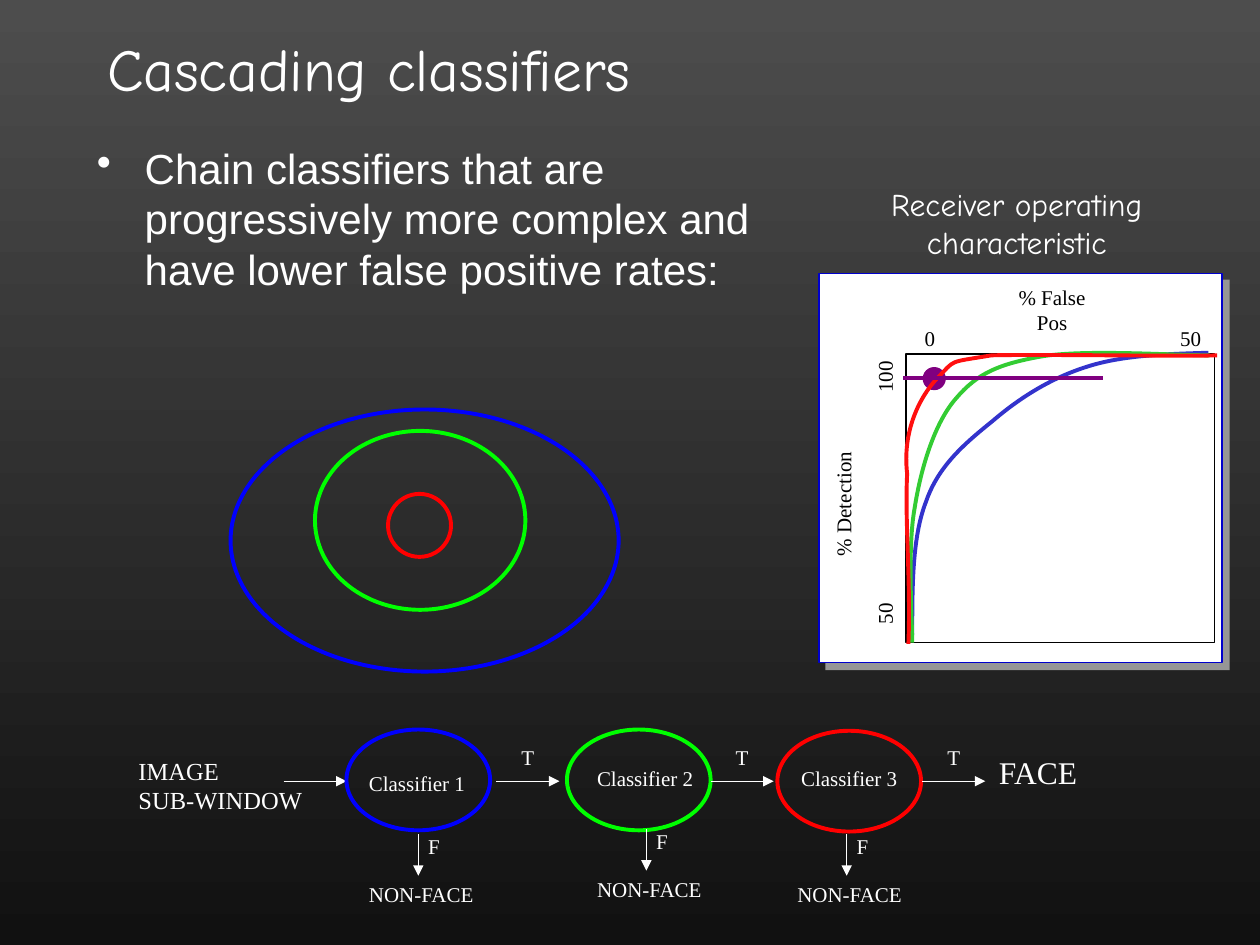
from dataclasses import dataclass

from pptx import Presentation
from pptx.dml.color import RGBColor
from pptx.enum.shapes import MSO_CONNECTOR, MSO_SHAPE
from pptx.enum.text import MSO_ANCHOR, PP_ALIGN
from pptx.oxml.ns import qn
from pptx.util import Inches, Pt
from lxml.etree import SubElement


@dataclass(frozen=True)
class Theme:
    background_top: str = "4D4D4D"
    background_bottom: str = "111111"
    white: str = "FFFFFF"
    black: str = "000000"
    shadow: str = "969696"
    panel_border: str = "0000CC"
    blue: str = "0000FF"
    green: str = "00FF00"
    red: str = "FF0000"
    curve_blue: str = "3333CC"
    curve_green: str = "33CC33"
    curve_red: str = "FF0F0F"
    purple: str = "800080"
    hand: str = "Comic Neue"
    sans: str = "Arial"
    serif: str = "Times New Roman"
    title: float = 34
    body: float = 24
    large: float = 18
    medium: float = 14
    small: float = 12
    thin: float = 0.75
    thick: float = 2.25


THEME = Theme()

# Each curve: start point, then cubic segments of two controls and an end
ROC_CURVES = [
    (THEME.curve_blue, (7.24, 5.04), [
        ((7.24, 4.65), (7.24, 4.26), (7.35, 3.98)),
        ((7.45, 3.69), (7.67, 3.51), (7.88, 3.34)),
        ((8.09, 3.16), (8.34, 3.0), (8.63, 2.91)),
        ((8.91, 2.82), (9.25, 2.81), (9.59, 2.8))]),
    (THEME.curve_green, (7.24, 5.1), [
        ((7.24, 4.92), (7.2, 4.35), (7.26, 4.03)),
        ((7.31, 3.71), (7.42, 3.35), (7.59, 3.16)),
        ((7.76, 2.96), (7.93, 2.89), (8.26, 2.83)),
        ((8.6, 2.77), (9.32, 2.82), (9.6, 2.82))]),
    (THEME.curve_red, (7.21, 5.11), [
        ((7.23, 4.61), (7.18, 4.14), (7.2, 3.76)),
        ((7.16, 3.42), (7.3, 3.15), (7.44, 3.0)),
        ((7.59, 2.85), (7.51, 2.88), (7.87, 2.82)),
        ((8.26, 2.81), (9.4, 2.83), (9.66, 2.82))]),
]

# Each stage: colour, ellipse corner, label corner, start of F arrow, start of T arrow
STAGES = [
    (THEME.blue, (2.75, 5.79), (2.83, 6.07), (3.32, 6.62), 3.94),
    (THEME.green, (4.5, 5.79), (4.64, 6.03), (5.13, 6.58), 5.64),
    (THEME.red, (6.17, 5.8), (6.26, 6.03), (6.72, 6.62), 7.32),
]


def color(value):
    return RGBColor.from_string(value)


def write_text(shape, text, size=THEME.small, font=THEME.serif, ink=THEME.white,
               align=PP_ALIGN.LEFT, wrap=False, inset=None):
    frame = shape.text_frame
    frame.word_wrap = wrap
    if inset is not None:
        frame.margin_left = frame.margin_right = Inches(inset)
        frame.margin_top = frame.margin_bottom = Inches(inset)
    frame.text = text
    for paragraph in frame.paragraphs:
        paragraph.alignment = align
        paragraph.font.size = Pt(size)
        paragraph.font.name = font
        paragraph.font.color.rgb = color(ink)
    return frame


def add_text(slide, text, left, top, width, height, **text_format):
    box = slide.shapes.add_textbox(Inches(left), Inches(top), Inches(width), Inches(height))
    write_text(box, text, **text_format)
    return box


def add_axis_label(slide, text, center_x, center_y, width, rotation=0, wrap=False):
    box = add_text(slide, text, center_x - width / 2, center_y - 0.1, width, 0.2,
                   ink=THEME.black, align=PP_ALIGN.CENTER, wrap=wrap, inset=0)
    box.rotation = rotation


def style_shape(shape, fill=None, line=None, weight=THEME.thin):
    shape.shadow.inherit = False
    if fill:
        shape.fill.solid()
        shape.fill.fore_color.rgb = color(fill)
    else:
        shape.fill.background()
    if line:
        shape.line.color.rgb = color(line)
        shape.line.width = Pt(weight)
    else:
        shape.line.fill.background()


def add_preset(slide, kind, left, top, width, height, **style):
    shape = slide.shapes.add_shape(
        kind, Inches(left), Inches(top), Inches(width), Inches(height))
    style_shape(shape, **style)


def add_line(slide, start, end, ink=THEME.white, weight=THEME.thin, arrow=True):
    x1, y1, x2, y2 = (Inches(value) for value in (*start, *end))
    line = slide.shapes.add_connector(MSO_CONNECTOR.STRAIGHT, x1, y1, x2, y2)
    line.line.color.rgb = color(ink)
    line.line.width = Pt(weight)
    if arrow:
        SubElement(line.line._get_or_add_ln(), qn("a:tailEnd"), type="triangle")
    SubElement(line._element.spPr, qn("a:effectLst"))


def add_curve(slide, ink, start, segments):
    builder = slide.shapes.build_freeform(Inches(start[0]), Inches(start[1]))
    ends = [(Inches(x), Inches(y)) for _, _, (x, y) in segments]
    builder.add_line_segments(ends, close=False)
    shape = builder.convert_to_shape()
    # Bend each straight segment into a cubic one
    straight_segments = list(shape._element.iter(qn("a:lnTo")))
    for straight, points in zip(straight_segments, segments):
        straight.tag = qn("a:cubicBezTo")
        straight.remove(straight[0])
        for x, y in points:
            SubElement(straight, qn("a:pt"),
                       x=str(Inches(x) - shape.left), y=str(Inches(y) - shape.top))
    style_shape(shape, line=ink, weight=THEME.thick)


def set_background(slide):
    fill = slide.background.fill
    fill.gradient()
    fill.gradient_angle = 270
    for stop, position, value in zip(fill.gradient_stops, (0, 1),
                                     (THEME.background_top, THEME.background_bottom)):
        stop.position = position
        stop.color.rgb = color(value)


def add_heading(slide):
    title = slide.shapes.title
    title.left, title.top, title.width, title.height = map(Inches, (0.75, 0.08, 8.5, 0.92))
    frame = write_text(title, "Cascading classifiers", size=THEME.title, font=THEME.hand, wrap=True)
    frame.vertical_anchor = MSO_ANCHOR.MIDDLE

    body = add_text(
        slide, "Chain classifiers that are progressively more complex and "
        "have lower false positive rates:", 0.67, 1.08, 6.08, 2.25,
        size=THEME.body, font=THEME.sans, wrap=True)
    properties = body.text_frame.paragraphs[0]._p.get_or_add_pPr()
    properties.set("marL", str(Inches(0.38)))
    properties.set("indent", str(-Inches(0.38)))
    bullet = properties.makeelement(qn("a:buChar"), {"char": "•"})
    properties.find(qn("a:defRPr")).addprevious(bullet)


def add_roc_panel(slide):
    add_text(slide, "Receiver operating characteristic", 6.48, 1.42, 3.18, 0.7,
             size=THEME.large, font=THEME.hand, align=PP_ALIGN.CENTER, wrap=True)
    rectangle = MSO_SHAPE.RECTANGLE
    add_preset(slide, rectangle, 6.55, 2.22, 3.21, 3.1, fill=THEME.shadow)
    add_preset(slide, rectangle, 6.5, 2.17, 3.2, 3.09, fill=THEME.white, line=THEME.panel_border)
    add_preset(slide, rectangle, 7.19, 2.81, 2.45, 2.29, line=THEME.black)

    # Axis titles and end values
    add_axis_label(slide, "% False Pos", 8.35, 2.36, 0.8, wrap=True)
    add_axis_label(slide, "% Detection", 6.69, 4, 0.83, rotation=270)
    add_axis_label(slide, "0", 7.38, 2.68, 0.1)
    add_axis_label(slide, "50", 9.45, 2.68, 0.2)
    add_axis_label(slide, "50", 7.02, 4.87, 0.2, rotation=270)
    add_axis_label(slide, "100", 7.02, 2.99, 0.3, rotation=270)

    # Operating point, curves and threshold
    add_preset(slide, MSO_SHAPE.OVAL, 7.33, 2.92, 0.17, 0.17,
               fill=THEME.purple, line=THEME.purple, weight=1)
    for ink, start, segments in ROC_CURVES:
        add_curve(slide, ink, start, segments)
    add_line(slide, (7.17, 3), (8.75, 3), ink=THEME.purple, weight=THEME.thick, arrow=False)


def add_nested_sets(slide):
    for ink, bounds in ((THEME.red, (3.08, 3.92, 0.5, 0.5)),
                        (THEME.green, (2.5, 3.42, 1.67, 1.42)),
                        (THEME.blue, (1.83, 3.25, 3.08, 2.08))):
        add_preset(slide, MSO_SHAPE.OVAL, *bounds, line=ink, weight=THEME.thick)


def add_cascade(slide):
    flow_y, arrow_length, drop_length = 6.2, 0.5, 0.33
    add_text(slide, "IMAGE\nSUB-WINDOW", 1, 5.95, 1.51, 0.57, size=THEME.medium)
    add_line(slide, (2.25, flow_y), (2.25 + arrow_length, flow_y))
    for number, (ink, corner, label, drop, exit_x) in enumerate(STAGES, start=1):
        add_preset(slide, MSO_SHAPE.OVAL, *corner, 1.14, 0.8, line=ink, weight=THEME.thick)
        add_text(slide, f"Classifier {number}", *label, 0.97, 0.3)
        # True branch goes on, false branch drops out
        add_line(slide, (exit_x, flow_y), (exit_x + arrow_length, flow_y))
        add_text(slide, "T", exit_x + 0.1, 5.86, 0.31, 0.3)
        x, y = drop
        add_line(slide, drop, (x, y + drop_length))
        add_text(slide, "F", x - 0.02, y - 0.05, 0.3, 0.3)
        add_text(slide, "NON-FACE", x - 0.49, y + drop_length, 1.04, 0.3)
    add_text(slide, "FACE", 7.83, 5.93, 0.84, 0.4, size=THEME.large)


def main():
    presentation = Presentation()
    presentation.slide_width, presentation.slide_height = Inches(10), Inches(7.5)
    slide = presentation.slides.add_slide(presentation.slide_layouts[5])
    set_background(slide)
    add_heading(slide)
    add_roc_panel(slide)
    add_nested_sets(slide)
    add_cascade(slide)
    presentation.save("out.pptx")


if __name__ == "__main__":
    main()
